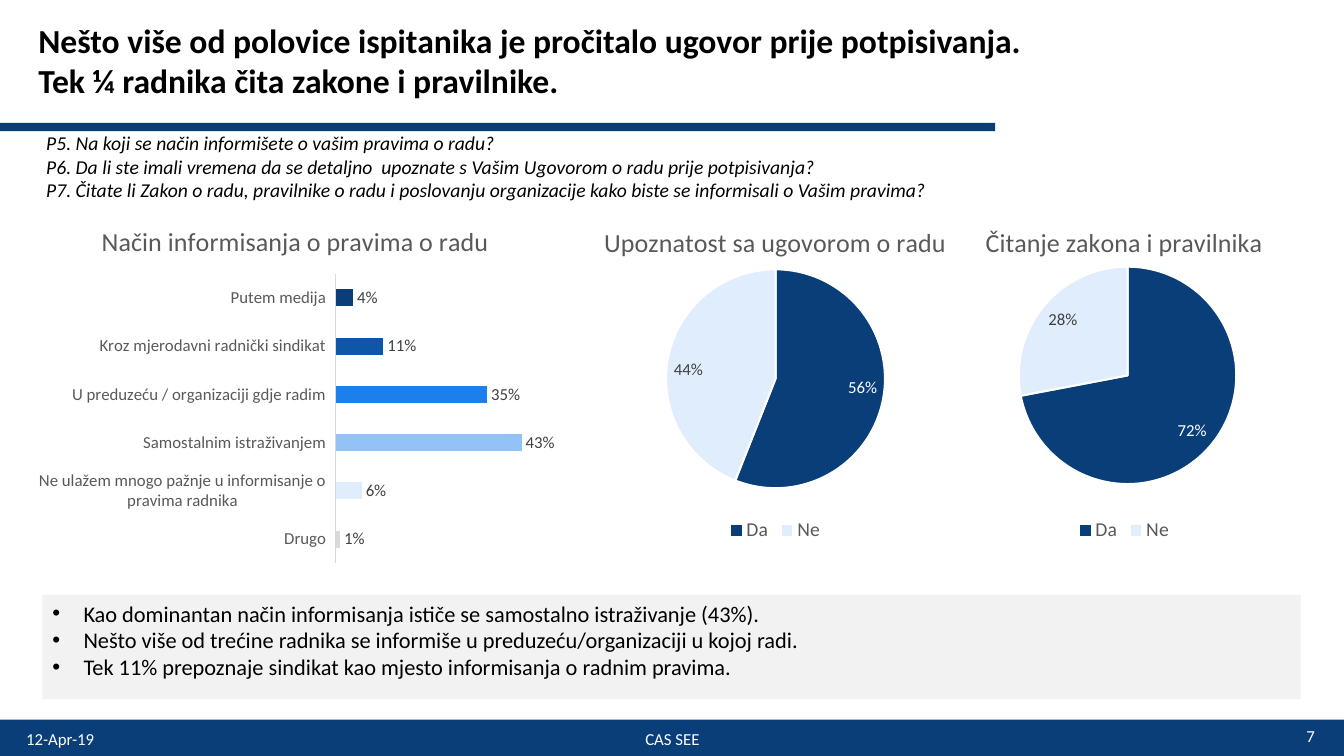
from lxml import etree
from pptx import Presentation
from pptx.chart.data import CategoryChartData
from pptx.dml.color import RGBColor
from pptx.enum.chart import XL_CHART_TYPE, XL_LABEL_POSITION, XL_LEGEND_POSITION, XL_TICK_LABEL_POSITION, XL_TICK_MARK
from pptx.enum.shapes import MSO_SHAPE
from pptx.enum.text import MSO_ANCHOR, MSO_AUTO_SIZE, PP_ALIGN
from pptx.oxml import parse_xml
from pptx.oxml.ns import nsdecls, qn
from pptx.util import Inches, Pt

BAR, PIE = XL_CHART_TYPE.BAR_CLUSTERED, XL_CHART_TYPE.PIE
OUTSIDE, INSIDE = XL_LABEL_POSITION.OUTSIDE_END, XL_LABEL_POSITION.INSIDE_END
LEGEND_BOTTOM = XL_LEGEND_POSITION.BOTTOM
LABELS_LOW = XL_TICK_LABEL_POSITION.LOW
NO_TICK = XL_TICK_MARK.NONE
RECT = MSO_SHAPE.RECTANGLE
TOP, MIDDLE = MSO_ANCHOR.TOP, MSO_ANCHOR.MIDDLE
NO_FIT = MSO_AUTO_SIZE.NONE
LEFT, CENTER, RIGHT, JUSTIFY = PP_ALIGN.LEFT, PP_ALIGN.CENTER, PP_ALIGN.RIGHT, PP_ALIGN.JUSTIFY

FONT = "Calibri"
NAVY, PALE, WHITE, BLACK = "0A3E78", "E0EDFC", "FFFFFF", "000000"
GREY, DARK_GREY, LIGHT_GREY, PANEL = "595959", "404040", "D9D9D9", "F2F2F2"

TITLE = ("Nešto više od polovice ispitanika je pročitalo ugovor prije potpisivanja.\v"
         "Tek ¼ radnika čita zakone i pravilnike.")
QUESTIONS = [
    "P5. Na koji se način informišete o vašim pravima o radu?",
    "P6. Da li ste imali vremena da se detaljno  upoznate s Vašim Ugovorom o radu prije potpisivanja?",
    "P7. Čitate li Zakon o radu, pravilnike o radu i poslovanju organizacije "
    "kako biste se informisali o Vašim pravima?",
]
FINDINGS = [
    "Kao dominantan način informisanja ističe se samostalno istraživanje (43%).",
    "Nešto više od trećine radnika se informiše u preduzeću/organizaciji u kojoj radi.",
    "Tek 11% prepoznaje sindikat kao mjesto informisanja o radnim pravima.",
]
SOURCES = [
    ("Putem medija", 0.04, NAVY),
    ("Kroz mjerodavni radnički sindikat", 0.11, "0E56A6"),
    ("U preduzeću / organizaciji gdje radim", 0.35, "1C7FEC"),
    ("Samostalnim istraživanjem", 0.43, "92C2F6"),
    ("Ne ulažem mnogo pažnje u informisanje o pravima radnika", 0.06, PALE),
    ("Drugo", 0.01, LIGHT_GREY),
]
PIES = [
    ("Upoznatost sa ugovorom o radu", 5.26, 0.56, (0.277, 0.182, 0.447, 0.647)),
    ("Čitanje zakona i pravilnika", 8.72, 0.72, (0.285, 0.174, 0.444, 0.643)),
]
FOOTER = [
    ("12-Apr-19", (0.16, 7.13, 3.11, 0.4), LEFT),
    ("CAS SEE", (4.56, 7.13, 4.22, 0.4), CENTER),
    ("7", (10.03, 7.1, 3.11, 0.4), RIGHT),
]


def rgb(color):
    return RGBColor.from_string(color)


def inches(box):
    return [Inches(v) for v in box]


def paint(fmt, color):
    fmt.fill.solid()
    fmt.fill.fore_color.rgb = rgb(color)


def set_font(font, size, color, bold=False, italic=False):
    font.name, font.size = FONT, Pt(size)
    font.bold, font.italic = bold, italic
    font.color.rgb = rgb(color)


def add_bullet(p):
    pPr = p._p.get_or_add_pPr()
    pPr.set("marL", str(Inches(0.31)))
    pPr.set("indent", str(Inches(-0.31)))
    etree.SubElement(pPr, qn("a:buFont")).set("typeface", "Arial")
    etree.SubElement(pPr, qn("a:buChar")).set("char", "•")


def write(sp, lines, size=12, color=BLACK, align=LEFT, anchor=TOP,
          bold=False, italic=False, bullet=False, wrap=True):
    tf = sp.text_frame
    tf.auto_size, tf.word_wrap, tf.vertical_anchor = NO_FIT, wrap, anchor
    for i, line in enumerate(lines):
        p = tf.add_paragraph() if i else tf.paragraphs[0]
        p.text = line
        p.alignment = align
        if bullet:
            add_bullet(p)
        for r in p.runs:
            set_font(r.font, size, color, bold, italic)


def add_text(s, box, lines, **fmt):
    write(s.shapes.add_textbox(*inches(box)), lines, **fmt)


def add_rect(s, box, color):
    sp = s.shapes.add_shape(RECT, *inches(box))
    sp.shadow.inherit = False
    paint(sp, color)
    sp.line.fill.background()
    return sp


def add_chart(s, kind, box, title, cats, values, colors, label_position):
    data = CategoryChartData(number_format="0%")
    data.categories = cats
    data.add_series(title, values)
    chart = s.shapes.add_chart(kind, *inches(box), data).chart
    set_font(chart.font, 10, BLACK)
    chart.has_title = True
    chart.chart_title.include_in_layout = False
    p = chart.chart_title.text_frame.paragraphs[0]
    p.text = title
    set_font(p.runs[0].font, 18.6, GREY)
    chart.has_legend = False
    plot = chart.plots[0]
    plot.vary_by_categories = kind == PIE
    series = plot.series[0]
    for i, color in enumerate(colors):
        paint(series.points[i].format, color)
    labels = series.data_labels
    labels.show_value = True
    labels.number_format, labels.number_format_is_linked = "0%", False
    labels.position = label_position
    set_font(labels.font, 12, DARK_GREY)
    return chart


def add_bar_chart(s):
    cats, values, colors = zip(*SOURCES)
    chart = add_chart(s, BAR, (0.28, 2.04, 5.3, 3.62), "Način informisanja o pravima o radu",
                      cats, values, colors, OUTSIDE)
    chart.plots[0].gap_width = 182
    axis = chart.category_axis
    axis.reverse_order = True
    axis.major_tick_mark = axis.minor_tick_mark = NO_TICK
    axis.tick_label_position = LABELS_LOW
    axis.format.line.color.rgb = rgb(LIGHT_GREY)
    axis.format.line.width = Pt(0.75)
    set_font(axis.tick_labels.font, 12, GREY)
    chart.value_axis.has_major_gridlines = False
    chart.value_axis.visible = False


def set_plot_area(chart, area):
    parts = "".join(f'<c:{tag} val="{v}"/>' for tag, v in zip("xywh", area))
    layout = parse_xml(
        f'<c:layout {nsdecls("c")}><c:manualLayout><c:layoutTarget val="inner"/>'
        f'<c:xMode val="edge"/><c:yMode val="edge"/>{parts}</c:manualLayout></c:layout>')
    plot_area = chart._chartSpace.chart.plotArea
    for old in plot_area.findall(qn("c:layout")):
        plot_area.remove(old)
    plot_area.insert(0, layout)


def add_pie_chart(s, title, left, yes, area):
    chart = add_chart(s, PIE, (left, 2.06, 4.86, 3.36), title, ("Da", "Ne"),
                      (yes, round(1 - yes, 2)), (NAVY, PALE), INSIDE)
    set_plot_area(chart, area)
    points = chart.plots[0].series[0].points
    for i in range(2):
        points[i].format.line.color.rgb = rgb(WHITE)
        points[i].format.line.width = Pt(1.5)
    label = points[0].data_label
    set_font(label.font, 12, WHITE)
    label.position = INSIDE
    chart.has_legend = True
    chart.legend.position = LEGEND_BOTTOM
    chart.legend.include_in_layout = False
    set_font(chart.legend.font, 14, GREY)


def add_title(s):
    sp = s.shapes.title
    sp.left, sp.top, sp.width, sp.height = inches((0.28, -0.03, 11.42, 1.25))
    write(sp, [TITLE], size=24, bold=True, anchor=MIDDLE)


def main():
    prs = Presentation()
    prs.slide_width, prs.slide_height = Inches(13.33), Inches(7.5)
    s = prs.slides.add_slide(prs.slide_layouts[5])
    add_rect(s, (0, 7.14, 13.33, 0.36), NAVY)
    add_rect(s, (0, 1.22, 9.87, 0.08), NAVY)
    add_title(s)
    for text, box, align in FOOTER:
        add_text(s, box, [text], color=WHITE, align=align, anchor=MIDDLE)
    add_text(s, (0.36, 1.25, 9.01, 0.81), QUESTIONS, size=14, italic=True, align=JUSTIFY, wrap=False)
    add_bar_chart(s)
    write(add_rect(s, (0.42, 5.9, 12.48, 1.04), PANEL), FINDINGS, size=16, bullet=True)
    for pie in PIES:
        add_pie_chart(s, *pie)
    prs.save("out.pptx")


if __name__ == "__main__":
    main()
